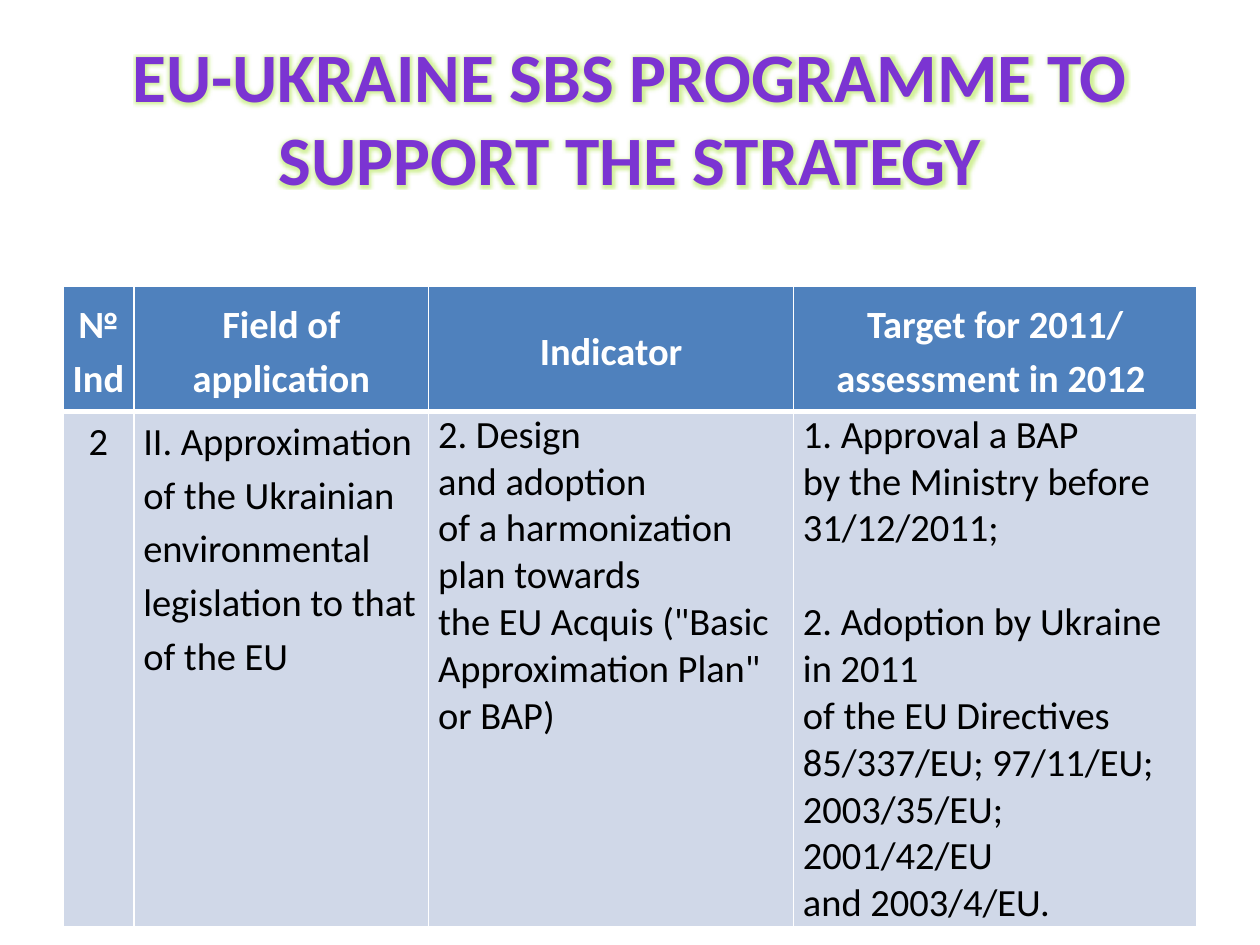
from lxml import etree
from pptx import Presentation
from pptx.dml.color import RGBColor
from pptx.enum.text import MSO_ANCHOR, PP_ALIGN
from pptx.oxml.ns import qn
from pptx.util import Pt

MID, TOP = MSO_ANCHOR.MIDDLE, MSO_ANCHOR.TOP
CENTER, LEFT = PP_ALIGN.CENTER, PP_ALIGN.LEFT

PURPLE = RGBColor(0x7B, 0x34, 0xD2)
LIME = RGBColor(0xD2, 0xF0, 0x9A)
BLUE = RGBColor(0x4F, 0x81, 0xBD)
PALE = RGBColor(0xD0, 0xD8, 0xE8)
WHITE = RGBColor(0xFF, 0xFF, 0xFF)
BLACK = RGBColor(0, 0, 0)
FONT = "Calibri"
TIE = chr(160)  # no-break space, marked ~ in the body texts

# Content
TITLE = "EU-UKRAINE SBS PROGRAMME TO SUPPORT THE STRATEGY"
HEADS = ["№ Ind", "Field of application", "Indicator",
         "Target for 2011/ assessment in 2012 "]
# Body cells: paragraphs, alignment, line spacing, space after
BODY = [
    (["2"], CENTER, 1.15, 10),
    (["II. Approximation of~the~Ukrainian environmental legislation "
      "to~that of~the~EU"], LEFT, 1.15, 10),
    (["2. Design and~adoption of~a~harmonization plan towards "
      "the~EU~Acquis (\"Basic Approximation Plan\" or~BAP)"], LEFT, 1, 10),
    (["1. Approval a~BAP by~the~Ministry before 31/12/2011;",
      "2. Adoption by Ukraine in~2011 of~the~EU~Directives 85/337/EU; "
      "97/11/EU; 2003/35/EU; 2001/42/EU and~2003/4/EU."], LEFT, 1, 26.8),
]
WIDTHS = [40.5, 168.5, 208.5, 230.5]
HEIGHTS = [72, 268.5]


def style(par, size, color, bold, align):
    par.alignment = align
    font = par.font
    font.name, font.size, font.bold = FONT, Pt(size), bold
    font.color.rgb = color


def border(cell, sides):
    props = cell._tc.get_or_add_tcPr()
    for i, (side, width) in enumerate(sides.items()):
        line = etree.Element(qn("a:ln" + side), w=str(Pt(width)))
        fill = etree.SubElement(line, qn("a:solidFill"))
        etree.SubElement(fill, qn("a:srgbClr"), val=str(WHITE))
        props.insert(i, line)


def write(cell, texts, fill, color, bold, align, anchor, lead, after):
    cell.fill.solid()
    cell.fill.fore_color.rgb = fill
    cell.vertical_anchor = anchor
    cell.margin_left = cell.margin_right = Pt(5.4)
    cell.margin_top = cell.margin_bottom = 0
    frame = cell.text_frame
    for i, text in enumerate(texts):
        par = frame.add_paragraph() if i else frame.paragraphs[0]
        par.text = text.replace("~", TIE)
        style(par, 22, color, bold, align)
        par.line_spacing = lead
        # The last paragraph of a longer cell needs no gap below
        last = len(texts) > 1 and i == len(texts) - 1
        par.space_after = Pt(0 if last else after)


deck = Presentation()
deck.slide_width, deck.slide_height = Pt(720), Pt(540)
slide = deck.slides.add_slide(deck.slide_layouts[5])

# Title with a soft glow
title = slide.shapes.title
title.left, title.top, title.width, title.height = map(Pt, (36, 21.6, 648, 90))
title.text_frame.text = TITLE
title.text_frame.vertical_anchor = MID
head = title.text_frame.paragraphs[0]
style(head, 39.6, PURPLE, True, CENTER)
run = head.runs[0]
run.font.color.rgb = PURPLE
effects = etree.SubElement(run._r.get_or_add_rPr(), qn("a:effectLst"))
glow = etree.SubElement(effects, qn("a:glow"), rad=str(Pt(4)))
etree.SubElement(glow, qn("a:srgbClr"), val=str(LIME))

# Table
table = slide.shapes.add_table(2, len(HEADS), Pt(36), Pt(163.3),
                               Pt(sum(WIDTHS)), Pt(sum(HEIGHTS))).table
table.horz_banding = False
for row, height in zip(table.rows, HEIGHTS):
    row.height = Pt(height)
for i, (width, text, body) in enumerate(zip(WIDTHS, HEADS, BODY)):
    table.columns[i].width = Pt(width)
    top, low = table.cell(0, i), table.cell(1, i)
    write(top, [text], BLUE, WHITE, True, CENTER, MID, 1.15, 10)
    border(top, {"L": 1, "R": 1, "T": 1, "B": 3})
    texts, align, lead, after = body
    write(low, texts, PALE, BLACK, False, align, TOP, lead, after)
    border(low, {"L": 1, "R": 1, "T": 3, "B": 1})

deck.save("out.pptx")
